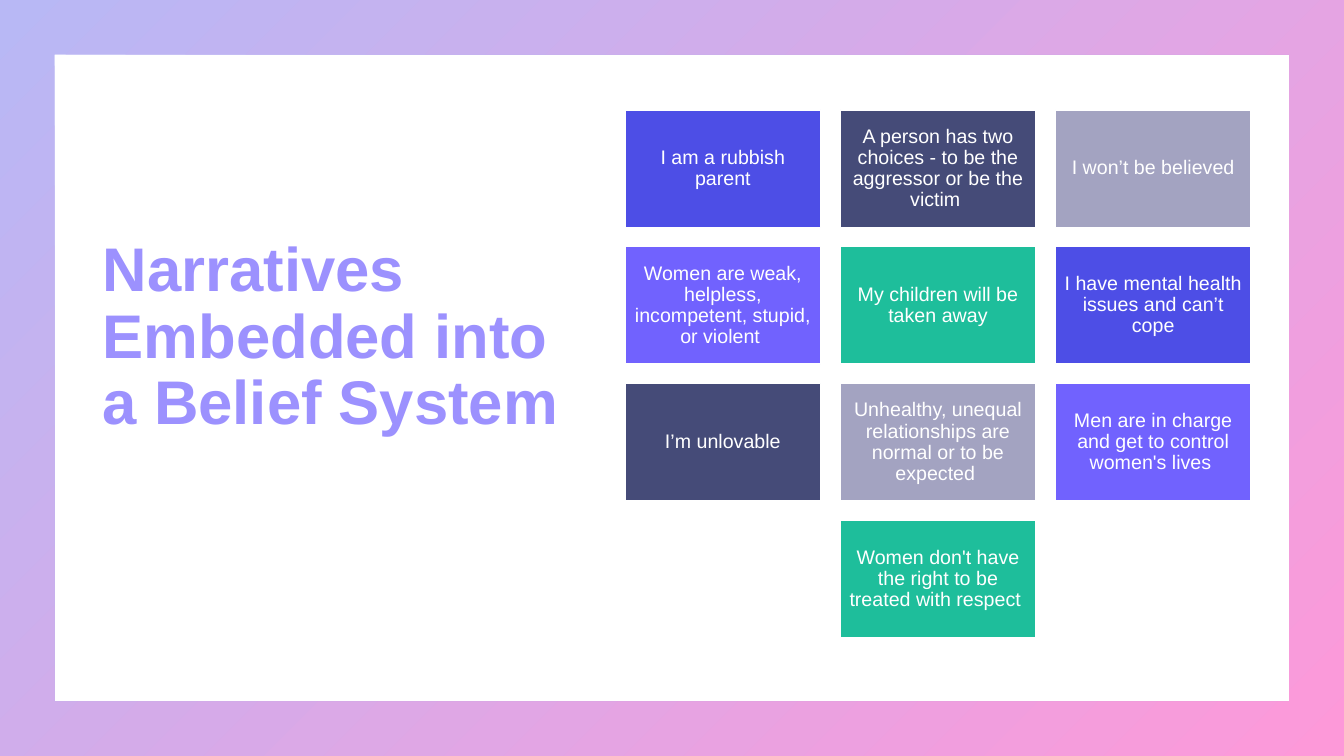
from dataclasses import dataclass

from pptx import Presentation
from pptx.dml.color import RGBColor
from pptx.enum.shapes import MSO_SHAPE
from pptx.enum.text import MSO_ANCHOR, MSO_AUTO_SIZE, PP_ALIGN
from pptx.slide import Slide
from pptx.util import Inches, Pt

FRAME = MSO_SHAPE.FRAME
RECTANGLE = MSO_SHAPE.RECTANGLE
MIDDLE = MSO_ANCHOR.MIDDLE
NO_FIT = MSO_AUTO_SIZE.NONE
LEFT = PP_ALIGN.LEFT
CENTER = PP_ALIGN.CENTER

WHITE = RGBColor(0xFF, 0xFF, 0xFF)
BLUE = RGBColor(0x4D, 0x4E, 0xE6)
NAVY = RGBColor(0x45, 0x4B, 0x78)
GREY = RGBColor(0xA3, 0xA3, 0xC1)
VIOLET = RGBColor(0x71, 0x62, 0xFE)
GREEN = RGBColor(0x1E, 0xBE, 0x9B)
LAVENDER = RGBColor(0x9C, 0x91, 0xFE)
PALE_BLUE = RGBColor(0xB8, 0xB8, 0xF5)
PALE_PINK = RGBColor(0xFD, 0x99, 0xD9)
CARD_COLORS = (BLUE, NAVY, GREY, VIOLET, GREEN)

FONT = "Arial"
LINE_SPACING = 0.9
SLIDE_WIDTH = 13.33
SLIDE_HEIGHT = 7.5
TITLE_ONLY_LAYOUT = 5

COLUMNS = 3
GRID_LEFT = 6.2
GRID_TOP = 1.09
CARD_WIDTH = 1.94
CARD_HEIGHT = CARD_WIDTH * 0.6
CARD_GAP = CARD_WIDTH * 0.1
CARD_INSET = 0.06

NARRATIVES = (
    "I am a rubbish parent",
    "A person has two choices - to be the aggressor or be the victim ",
    "I won’t be believed",
    "Women are weak, helpless, incompetent, stupid, or violent ",
    "My children will be taken away",
    "I have mental health issues and can’t cope",
    "I’m unlovable",
    "Unhealthy, unequal relationships are normal or to be expected ",
    "Men are in charge and get to control women's lives ",
    "Women don't have the right to be treated with respect ",
)


@dataclass(frozen=True)
class Card:
    text: str
    color: RGBColor
    left: float
    top: float


def lay_out_cards() -> list[Card]:
    cards = []
    for index, text in enumerate(NARRATIVES):
        row, column = divmod(index, COLUMNS)
        cards_in_row = min(COLUMNS, len(NARRATIVES) - row * COLUMNS)
        centered_column = column + (COLUMNS - cards_in_row) / 2
        cards.append(Card(
            text,
            CARD_COLORS[index % len(CARD_COLORS)],
            GRID_LEFT + centered_column * (CARD_WIDTH + CARD_GAP),
            GRID_TOP + row * (CARD_HEIGHT + CARD_GAP),
        ))
    return cards


def add_frame(slide: Slide) -> None:
    frame = slide.shapes.add_shape(
        FRAME, 0, 0, Inches(SLIDE_WIDTH), Inches(SLIDE_HEIGHT))
    frame.adjustments[0] = 0.072
    frame.shadow.inherit = False
    frame.line.fill.background()
    frame.fill.gradient()
    frame.fill.gradient_angle = 315
    for stop, color in zip(frame.fill.gradient_stops, (PALE_BLUE, PALE_PINK)):
        stop.color.rgb = color


def format_title(slide: Slide) -> None:
    title = slide.shapes.title
    title.left, title.top = Inches(0.92), Inches(0.67)
    title.width, title.height = Inches(4.86), Inches(5.37)
    text_frame = title.text_frame
    text_frame.text = "Narratives Embedded into a Belief System"
    text_frame.word_wrap = True
    text_frame.auto_size = NO_FIT
    text_frame.vertical_anchor = MIDDLE
    paragraph = text_frame.paragraphs[0]
    paragraph.alignment = LEFT
    paragraph.line_spacing = LINE_SPACING
    paragraph.font.name = FONT
    paragraph.font.size = Pt(44)
    paragraph.font.bold = True
    paragraph.font.color.rgb = LAVENDER


def add_card(slide: Slide, card: Card) -> None:
    shape = slide.shapes.add_shape(
        RECTANGLE, Inches(card.left), Inches(card.top),
        Inches(CARD_WIDTH), Inches(CARD_HEIGHT))
    shape.shadow.inherit = False
    shape.fill.solid()
    shape.fill.fore_color.rgb = card.color
    shape.line.color.rgb = WHITE
    shape.line.width = Pt(1)
    text_frame = shape.text_frame
    text_frame.text = card.text
    text_frame.word_wrap = True
    text_frame.vertical_anchor = MIDDLE
    text_frame.margin_left = text_frame.margin_right = Inches(CARD_INSET)
    text_frame.margin_top = text_frame.margin_bottom = Inches(CARD_INSET)
    paragraph = text_frame.paragraphs[0]
    paragraph.alignment = CENTER
    paragraph.line_spacing = LINE_SPACING
    paragraph.font.name = FONT
    paragraph.font.size = Pt(14)
    paragraph.font.color.rgb = WHITE


def main() -> None:
    presentation = Presentation()
    presentation.slide_width = Inches(SLIDE_WIDTH)
    presentation.slide_height = Inches(SLIDE_HEIGHT)
    slide = presentation.slides.add_slide(
        presentation.slide_layouts[TITLE_ONLY_LAYOUT])
    add_frame(slide)
    format_title(slide)
    for card in lay_out_cards():
        add_card(slide, card)
    presentation.save("out.pptx")


if __name__ == "__main__":
    main()
